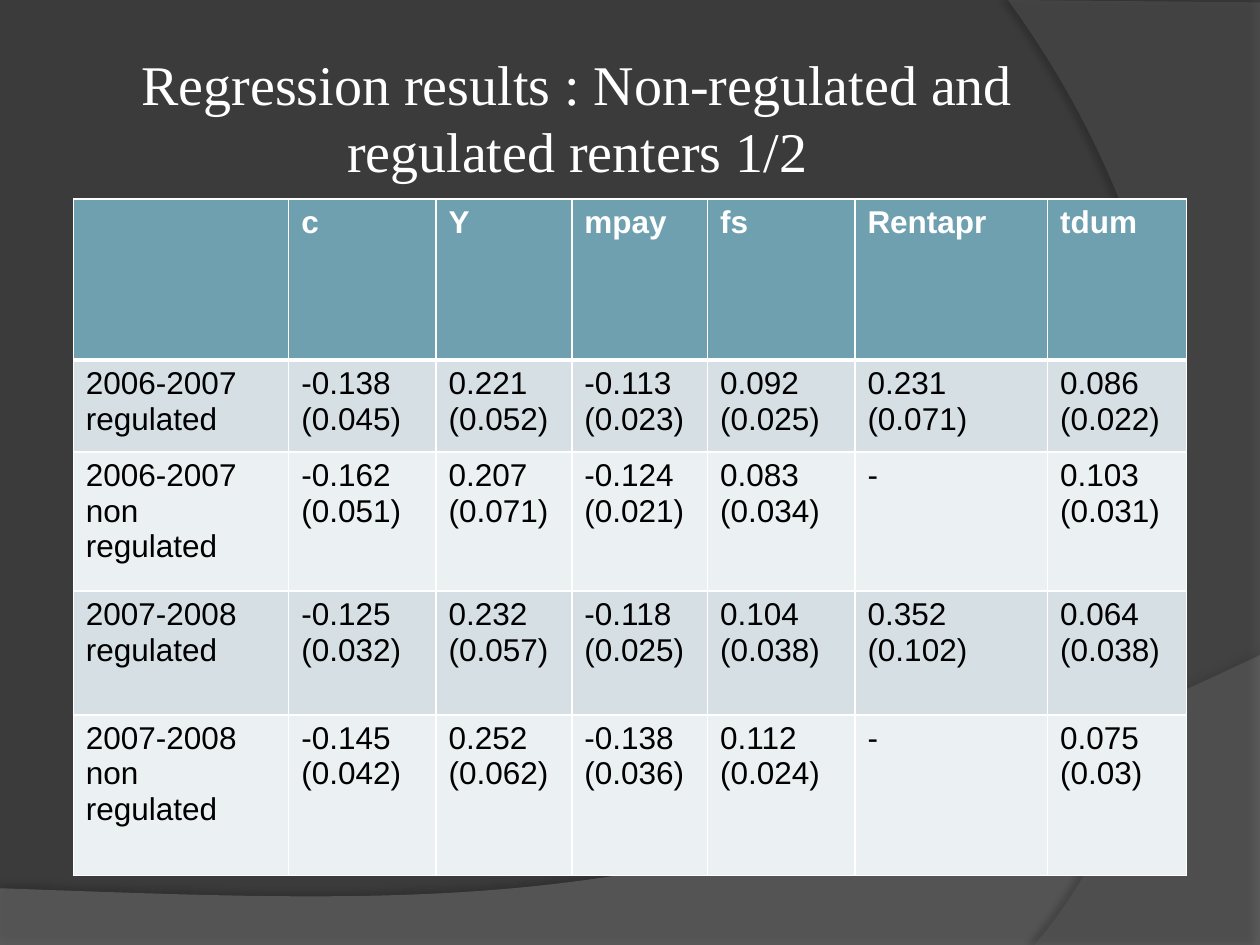
"""Build the slide of regression results for regulated and non-regulated renters."""
from dataclasses import dataclass

from lxml import etree
from pptx import Presentation
from pptx.dml.color import RGBColor
from pptx.enum.text import MSO_ANCHOR, PP_ALIGN
from pptx.oxml.ns import qn
from pptx.util import Pt

CENTER, LEFT = PP_ALIGN.CENTER, PP_ALIGN.LEFT
MIDDLE = MSO_ANCHOR.MIDDLE
TITLE_ONLY = 5
CURVE_STEPS = 60

Point = tuple[float, float]


@dataclass(frozen=True)
class Theme:
    background: str = "3B3B3B"
    light: str = "FFFFFF"
    dark: str = "000000"
    header: str = "6EA0B0"
    bands: tuple[str, str] = ("D5DFE4", "EBF0F2")
    title_font: str = "Times New Roman"
    body_font: str = "Arial"
    title_size: float = 32
    body_size: float = 18
    thin_border: float = 1
    header_border: float = 3


@dataclass(frozen=True)
class Wave:
    corners: tuple[Point, ...]
    controls: tuple[Point, Point]
    end: Point
    color: str
    opacity: int
    shadow_opacity: int
    shadow_distance: float
    shadow_degrees: int


@dataclass(frozen=True)
class Result:
    label: str
    height: float
    values: tuple[str, ...]


THEME = Theme()
WAVES = (
    Wave(((0, 507.6), (0, 540), (720, 540), (720, 374.4)),
         ((402.5, 524.9), (281.5, 517.7)), (0, 507.6), "7F7F7F", 45, 35, 3.5, 270),
    Wave(((720, 1.4), (720, 540), (591.1, 540)),
         ((673.2, 445.7), (733, 216)), (576, 0), "5E5E5E", 40, 45, 4, 180),
)
HEADINGS = ("", "c", "Y", "mpay", "fs", "Rentapr", "tdum")
COLUMN_WIDTHS = (123.1, 84.2, 77.6, 77.6, 84.2, 110.1, 79.4)
HEADER_HEIGHT = 92
RESULTS = (
    Result("2006-2007 regulated", 52.6,
           ("-0.138\n(0.045)", "0.221\n(0.052)", "-0.113\n(0.023)",
            "0.092\n(0.025)", "0.231\n(0.071)", "0.086\n(0.022)")),
    Result("2006-2007 non regulated", 79.4,
           ("-0.162\n(0.051)", "0.207\n(0.071)", "-0.124\n(0.021)",
            "0.083\n(0.034)", "-", "0.103\n(0.031)")),
    Result("2007-2008 regulated", 70.8,
           ("-0.125\n(0.032)", "0.232\n(0.057)", "-0.118\n(0.025)",
            "0.104\n(0.038)", "0.352\n(0.102)", "0.064\n(0.038)")),
    Result("2007-2008 non regulated", 92,
           ("-0.145\n(0.042)", "0.252\n(0.062)", "-0.138\n(0.036)",
            "0.112\n(0.024)", "-", "0.075\n(0.03)")),
)


def write_text(text_frame, text: str, *, font: str, size: float, color: str,
               bold: bool = False, align=LEFT) -> None:
    """Write one paragraph per line of text in the given format."""
    text_frame.text = text
    for paragraph in text_frame.paragraphs:
        paragraph.alignment = align
        for run in paragraph.runs:
            run.font.name, run.font.size, run.font.bold = font, Pt(size), bold
            run.font.color.rgb = RGBColor.from_string(color)


def add_alpha(color_element, percent: int) -> None:
    """Set the opacity of a colour element."""
    etree.SubElement(color_element, qn("a:alpha"), val=str(percent * 1000))


def curve_points(start: Point, controls: tuple[Point, Point], end: Point) -> list[Point]:
    """Return points along a cubic curve, without its start."""
    points = []
    for step in range(1, CURVE_STEPS + 1):
        t = step / CURVE_STEPS
        weights = ((1 - t) ** 3, 3 * t * (1 - t) ** 2, 3 * t * t * (1 - t), t ** 3)
        points.append(tuple(
            sum(weight * point[axis] for weight, point in zip(weights, (start, *controls, end)))
            for axis in (0, 1)))
    return points


def draw_wave(slide, wave: Wave) -> None:
    """Draw a translucent background wave with a soft shadow."""
    outline = [*wave.corners, *curve_points(wave.corners[-1], wave.controls, wave.end)]
    points = [(Pt(x), Pt(y)) for x, y in outline]
    builder = slide.shapes.build_freeform(*points[0])
    builder.add_line_segments(points[1:], close=True)
    shape = builder.convert_to_shape()
    shape.fill.solid()
    shape.fill.fore_color.rgb = RGBColor.from_string(wave.color)
    shape.line.fill.background()
    shape.shadow.inherit = False
    properties = shape.element.spPr
    add_alpha(properties.find(f"{qn('a:solidFill')}/{qn('a:srgbClr')}"), wave.opacity)
    shadow = etree.SubElement(
        properties.find(qn("a:effectLst")), qn("a:outerShdw"), blurRad=str(Pt(4)),
        dist=str(Pt(wave.shadow_distance)), dir=str(wave.shadow_degrees * 60000),
        algn="ctr", rotWithShape="0")
    add_alpha(etree.SubElement(shadow, qn("a:srgbClr"), val=THEME.dark), wave.shadow_opacity)


def set_border(cell, side: str, width: float) -> None:
    """Draw one side of a cell's border."""
    properties = cell._tc.get_or_add_tcPr()
    line = etree.SubElement(properties, qn(f"a:ln{side}"), w=str(Pt(width)))
    fill = etree.SubElement(line, qn("a:solidFill"))
    etree.SubElement(fill, qn("a:srgbClr"), val=THEME.light)


def draw_row(table, index: int, height: float, texts: tuple[str, ...]) -> None:
    """Fill and format one row of the table."""
    is_header = index == 0
    table.rows[index].height = Pt(height)
    for cell, text in zip(table.rows[index].cells, texts):
        for side in "LRTB":
            thick = (index, side) in ((0, "B"), (1, "T"))
            set_border(cell, side, THEME.header_border if thick else THEME.thin_border)
        cell.fill.solid()
        cell.fill.fore_color.rgb = RGBColor.from_string(
            THEME.header if is_header else THEME.bands[(index - 1) % 2])
        write_text(cell.text_frame, text, font=THEME.body_font, size=THEME.body_size,
                   color=THEME.light if is_header else THEME.dark, bold=is_header)


def draw_table(slide) -> None:
    """Draw the table of coefficients and standard errors."""
    height = HEADER_HEIGHT + sum(result.height for result in RESULTS)
    table = slide.shapes.add_table(
        len(RESULTS) + 1, len(HEADINGS), Pt(41.9), Pt(113.7),
        Pt(sum(COLUMN_WIDTHS)), Pt(height)).table
    for column, width in zip(table.columns, COLUMN_WIDTHS):
        column.width = Pt(width)
    draw_row(table, 0, HEADER_HEIGHT, HEADINGS)
    for index, result in enumerate(RESULTS, start=1):
        draw_row(table, index, result.height, (result.label, *result.values))


def draw_title(slide) -> None:
    """Place the title in front of the waves."""
    title = slide.shapes.title
    slide.shapes._spTree.append(title.element)
    title.left, title.top, title.width, title.height = Pt(36), Pt(21.6), Pt(588), Pt(90)
    frame = title.text_frame
    frame.word_wrap, frame.vertical_anchor = True, MIDDLE
    frame.margin_left = frame.margin_right = frame.margin_top = frame.margin_bottom = Pt(3.6)
    write_text(frame, "Regression results : Non-regulated and regulated renters 1/2",
               font=THEME.title_font, size=THEME.title_size, color=THEME.light, align=CENTER)


def main() -> None:
    """Build and save the presentation."""
    presentation = Presentation()
    presentation.slide_width, presentation.slide_height = Pt(720), Pt(540)
    slide = presentation.slides.add_slide(presentation.slide_layouts[TITLE_ONLY])
    slide.background.fill.solid()
    slide.background.fill.fore_color.rgb = RGBColor.from_string(THEME.background)
    for wave in WAVES:
        draw_wave(slide, wave)
    draw_title(slide)
    draw_table(slide)
    presentation.save("out.pptx")


if __name__ == "__main__":
    main()
